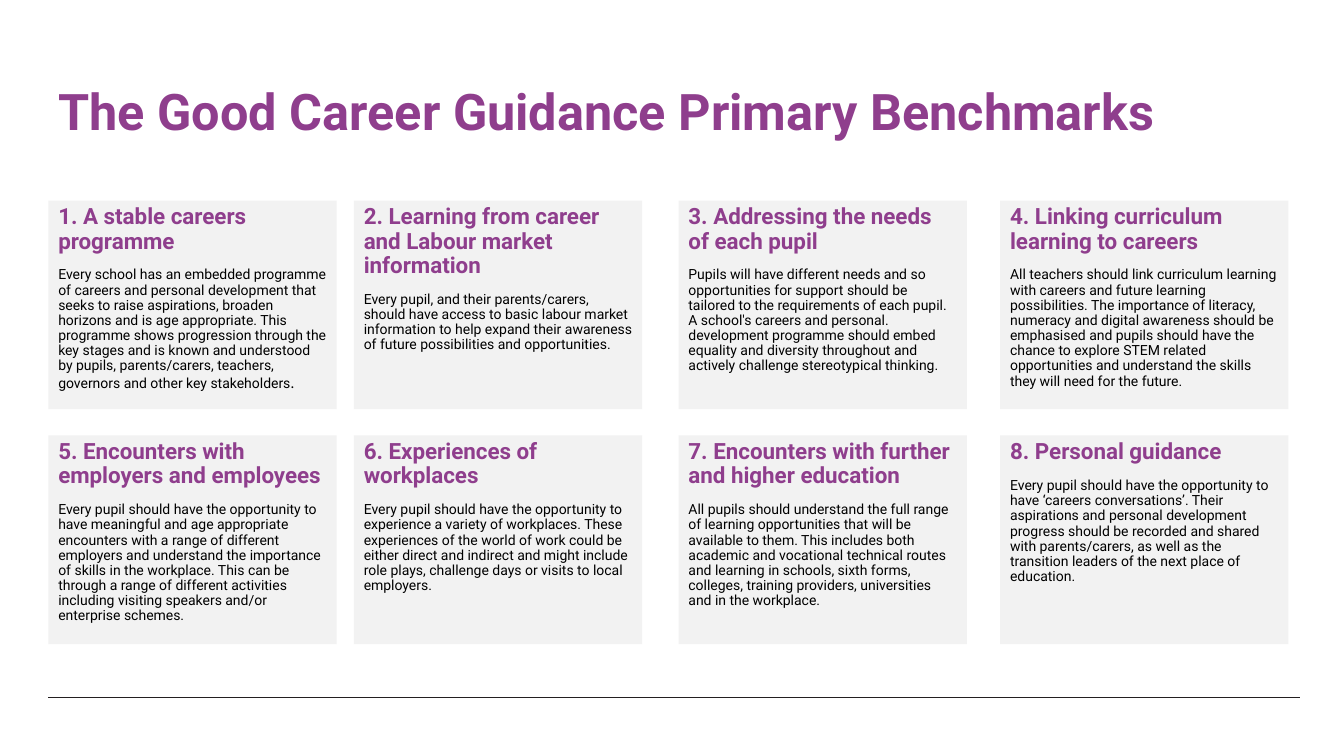
from dataclasses import dataclass

from lxml import etree
from pptx import Presentation
from pptx.dml.color import RGBColor
from pptx.enum.shapes import MSO_CONNECTOR, MSO_SHAPE
from pptx.enum.text import MSO_ANCHOR, PP_ALIGN
from pptx.oxml.ns import qn
from pptx.util import Inches, Pt

STRAIGHT = MSO_CONNECTOR.STRAIGHT
RECTANGLE = MSO_SHAPE.RECTANGLE
TOP, BOTTOM = MSO_ANCHOR.TOP, MSO_ANCHOR.BOTTOM
LEFT = PP_ALIGN.LEFT

FONT = "Roboto"
PURPLE, BLACK, GREY, RULE = "8F3E8D", "000000", "F2F2F2", "231F20"
MARGIN, CONTENT_WIDTH = 0.48, 12.41
COLUMN_LEFTS = (MARGIN, 3.51, 6.73, 9.92)
ROW_TOPS = (1.99, 4.32)
CARD_WIDTH, CARD_HEIGHT = 2.86, 2.07


@dataclass
class Benchmark:
    heading: str
    description: str
    large_ending: str = ""


BENCHMARKS = [
    Benchmark(
        "1. A stable careers programme",
        "Every school has an embedded programme of careers and personal development "
        "that seeks to raise aspirations, broaden horizons and is age appropriate. "
        "This programme shows progression through the key stages and is known and "
        "understood by pupils, parents/carers, teachers, governors and other key "
        "stakeholders",
        large_ending=".",
    ),
    Benchmark(
        "2. Learning from career and Labour market information",
        "Every pupil, and their parents/carers, should have access to basic labour "
        "market information to help expand their awareness of future possibilities "
        "and opportunities.",
    ),
    Benchmark(
        "3. Addressing the needs of each pupil",
        "Pupils will have different needs and so opportunities for support should be "
        "tailored to the requirements of each pupil. A school's careers and personal. "
        "development programme should embed equality and diversity throughout and "
        "actively challenge stereotypical thinking.",
    ),
    Benchmark(
        "4. Linking curriculum learning to careers",
        "All teachers should link curriculum learning with careers and future learning "
        "possibilities. The importance of literacy, numeracy and digital awareness "
        "should be emphasised and pupils should have the chance to explore STEM related "
        "opportunities and understand the skills they will need for the future.",
    ),
    Benchmark(
        "5. Encounters with employers and employees",
        "Every pupil should have the opportunity to have meaningful and age appropriate "
        "encounters with a range of different employers and understand the importance "
        "of skills in the workplace. This can be through a range of different "
        "activities including visiting speakers and/or enterprise schemes.",
    ),
    Benchmark(
        "6. Experiences of workplaces",
        "Every pupil should have the opportunity to experience a variety of workplaces. "
        "These experiences of the world of work could be either direct and indirect and "
        "might include role plays, challenge days or visits to local employers.",
    ),
    Benchmark(
        "7. Encounters with further and higher education",
        "All pupils should understand the full range of learning opportunities that "
        "will be available to them. This includes both academic and vocational "
        "technical routes and learning in schools, sixth forms, colleges, training "
        "providers, universities and in the workplace.",
    ),
    Benchmark(
        "8. Personal guidance",
        "Every pupil should have the opportunity to have ‘careers conversations’. Their "
        "aspirations and personal development progress should be recorded and shared "
        "with parents/carers, as well as the transition leaders of the next place of "
        "education.",
    ),
]


def rgb(color: str) -> RGBColor:
    return RGBColor.from_string(color)


def style_paragraph(paragraph, size: float, color: str, bold: bool = False) -> None:
    paragraph.alignment = LEFT
    paragraph.line_spacing = 0.9
    for run in paragraph.runs:
        run.font.name = FONT
        run.font.size = Pt(size)
        run.font.bold = bold
        run.font.color.rgb = rgb(color)


def add_footer_rule(slide) -> None:
    y = Inches(6.92)
    rule = slide.shapes.add_connector(
        STRAIGHT, Inches(MARGIN), y, Inches(MARGIN + CONTENT_WIDTH), y
    )
    rule.line.color.rgb = rgb(RULE)
    rule.line.width = Pt(0.5)
    etree.SubElement(rule._element.spPr, qn("a:effectLst"))


def add_title(slide, title: str) -> None:
    heading = slide.shapes.add_textbox(
        Inches(MARGIN), Inches(0.4), Inches(CONTENT_WIDTH), Inches(1.05)
    )
    frame = heading.text_frame
    frame.word_wrap = True
    frame.vertical_anchor = BOTTOM
    frame.text = title
    style_paragraph(frame.paragraphs[0], 36, PURPLE, bold=True)


def add_card(slide, benchmark: Benchmark, left: float, top: float) -> None:
    card = slide.shapes.add_shape(
        RECTANGLE, Inches(left), Inches(top), Inches(CARD_WIDTH), Inches(CARD_HEIGHT)
    )
    card.shadow.inherit = False
    card.fill.solid()
    card.fill.fore_color.rgb = rgb(GREY)
    card.line.fill.background()

    frame = card.text_frame
    frame.word_wrap = True
    frame.vertical_anchor = TOP
    frame.text = f"{benchmark.heading}\n{benchmark.description}"
    heading, description = frame.paragraphs
    style_paragraph(heading, 16, PURPLE, bold=True)
    description.space_before = Pt(10)
    if benchmark.large_ending:
        description.add_run().text = benchmark.large_ending
    style_paragraph(description, 10, BLACK)
    if benchmark.large_ending:
        description.runs[-1].font.size = Pt(12)


def main() -> None:
    deck = Presentation()
    deck.slide_width, deck.slide_height = Inches(13.33), Inches(7.5)
    slide = deck.slides.add_slide(deck.slide_layouts[6])

    # Title and footer rule
    add_footer_rule(slide)
    add_title(slide, "The Good Career Guidance Primary Benchmarks")

    # Benchmark cards, numbered along each row
    for index, benchmark in enumerate(BENCHMARKS):
        row, column = divmod(index, len(COLUMN_LEFTS))
        add_card(slide, benchmark, COLUMN_LEFTS[column], ROW_TOPS[row])

    deck.save("out.pptx")


if __name__ == "__main__":
    main()
